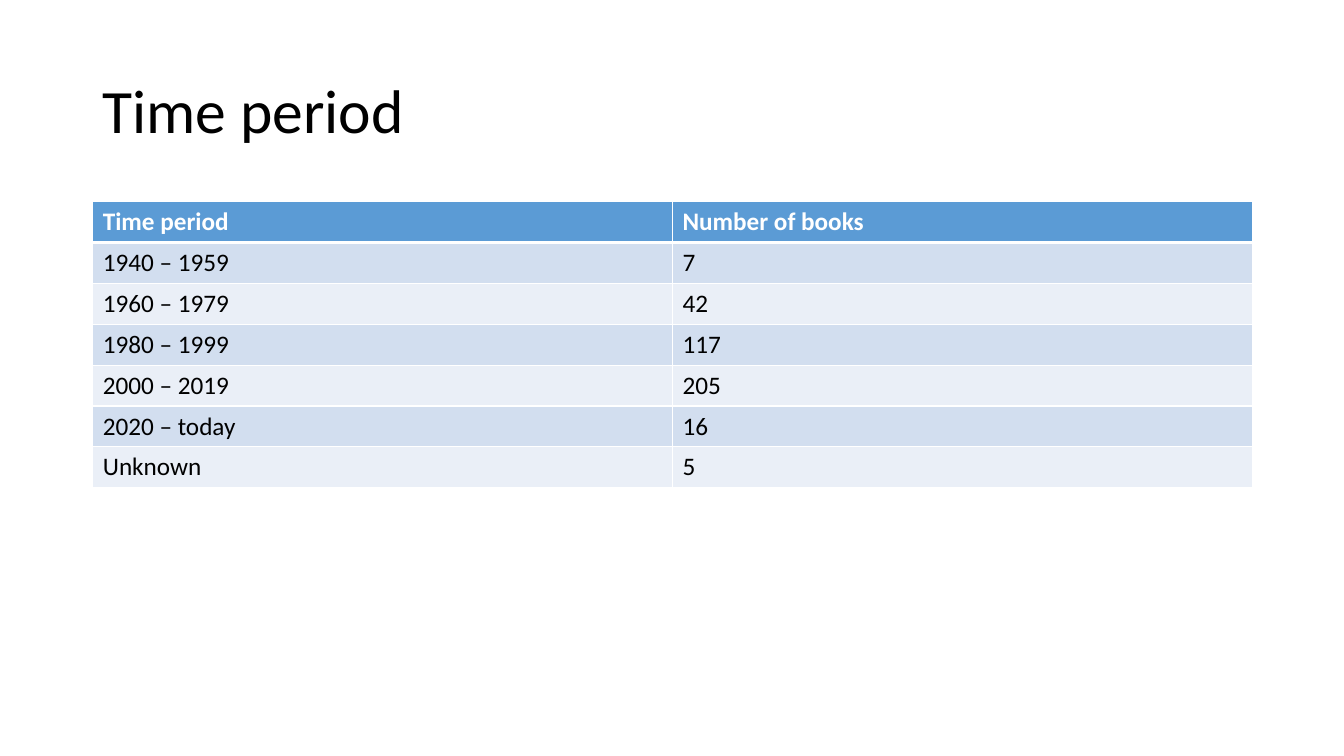
from lxml import etree
from pptx import Presentation
from pptx import util as u
from pptx.dml.color import RGBColor
from pptx.enum import text
from pptx.oxml.ns import qn

W, H = u.Inches(13.33), u.Inches(7.5)
LEFT, WIDTH = u.Inches(0.92), u.Inches(11.5)
ROW_H = u.Inches(2.84 / 7)
COLORS = {"text": "000000", "white": "FFFFFF", "head": "5B9BD5",
          "odd": "D2DEEF", "even": "EAEFF7"}
TITLE = {"size": u.Pt(44), "name": "Calibri", "bold": False}
HEAD = {"size": u.Pt(18), "name": "Calibri", "bold": True}
BODY = {**HEAD, "bold": False}
ROWS = [
    ("Time period", "Number of books"),
    ("1940 – 1959", "7"),
    ("1960 – 1979", "42"),
    ("1980 – 1999", "117"),
    ("2000 – 2019", "205"),
    ("2020 – today", "16"),
    ("Unknown", "5"),
]


def write(tf, words, fmt, color):
    p = tf.paragraphs[0]
    r = p.add_run()
    r.text = words
    for key, value in fmt.items():
        setattr(r.font, key, value)
    r.font.color.rgb = RGBColor.from_string(COLORS[color])
    return p


def add_title(s, words):
    sp = s.shapes.add_textbox(LEFT, u.Inches(0.4), WIDTH, u.Inches(1.45))
    tf = sp.text_frame
    tf.word_wrap = True
    tf.vertical_anchor = text.MSO_ANCHOR.MIDDLE
    write(tf, words, TITLE, "text").line_spacing = 0.9


def set_borders(cell, widths):
    tcPr = cell._tc.get_or_add_tcPr()
    for side, width in widths.items():
        ln = etree.SubElement(tcPr, qn(f"a:ln{side}"), w=str(u.Pt(width)))
        fill = etree.SubElement(ln, qn("a:solidFill"))
        etree.SubElement(fill, qn("a:srgbClr"), val=COLORS["white"])


def add_table(s, rows):
    tbl = s.shapes.add_table(len(rows), len(rows[0]), LEFT, u.Inches(2),
                             WIDTH, ROW_H * len(rows)).table
    for i, row in enumerate(rows):
        tbl.rows[i].height = ROW_H
        band = "head" if i == 0 else "odd" if i % 2 else "even"
        fmt, color = (HEAD, "white") if i == 0 else (BODY, "text")
        for j, words in enumerate(row):
            cell = tbl.cell(i, j)
            set_borders(cell, {"L": 1, "R": 1, "T": 3 if i == 1 else 1,
                               "B": 3 if i == 0 else 1})
            cell.fill.solid()
            cell.fill.fore_color.rgb = RGBColor.from_string(COLORS[band])
            write(cell.text_frame, words, fmt, color)


def main():
    prs = Presentation()
    prs.slide_width, prs.slide_height = W, H
    s = prs.slides.add_slide(prs.slide_layouts[6])
    add_title(s, "Time period")
    add_table(s, ROWS)
    prs.save("out.pptx")


if __name__ == "__main__":
    main()
